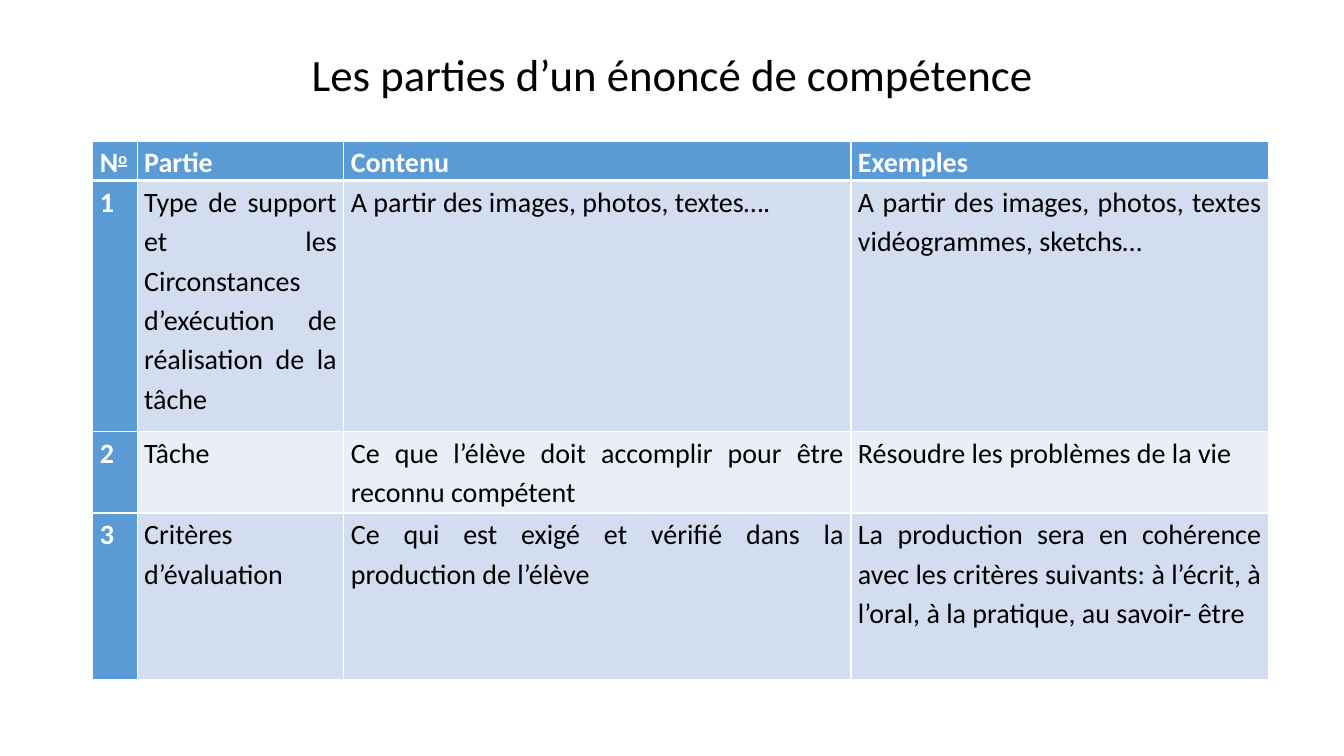
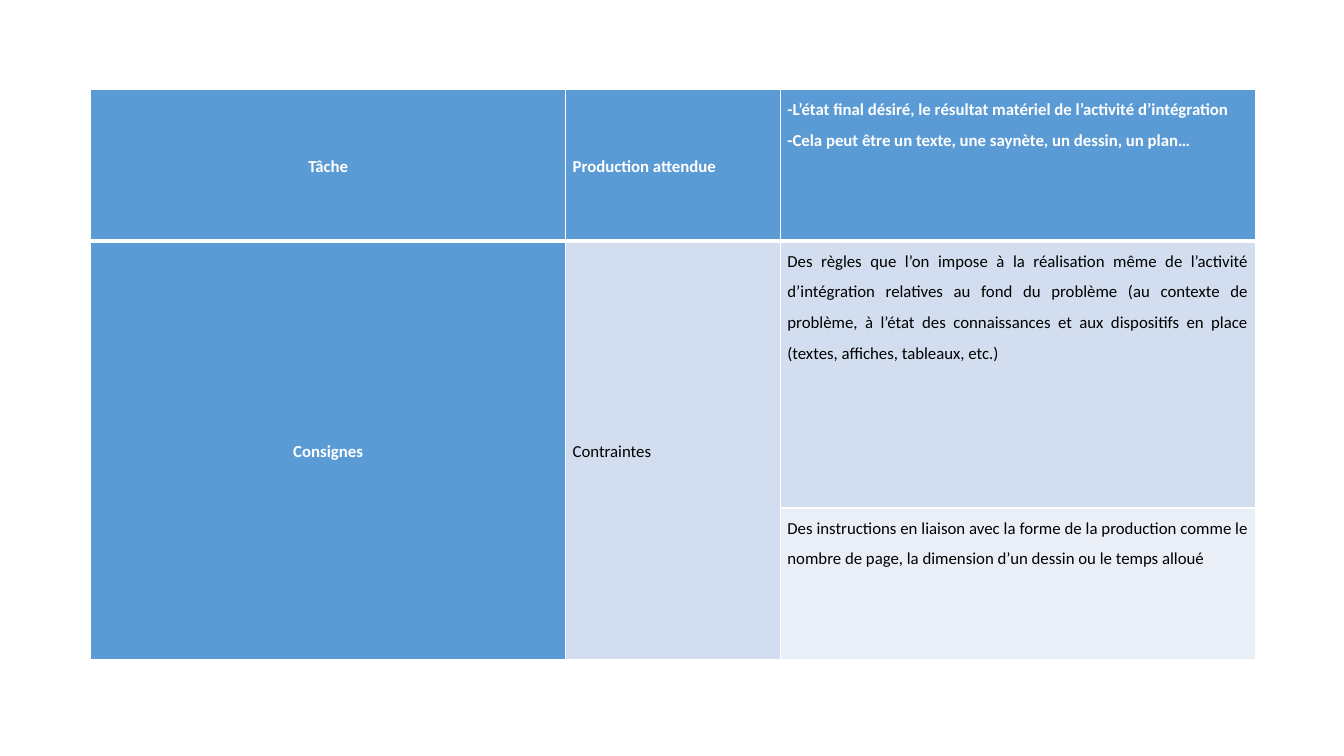
from collections import namedtuple

from lxml.etree import SubElement
from pptx import Presentation
from pptx.dml.color import RGBColor as Color
from pptx.enum.text import MSO_ANCHOR as Anchor, PP_ALIGN as Align
from pptx.oxml.ns import qn
from pptx.util import Emu, Pt

PX = 9144  # one hundred px to the inch

Theme = namedtuple(
    "Theme", "font title_size large small ink white accent band_odd band_even thin thick")
theme = Theme(
    font="Calibri", title_size=32, large=20, small=12,
    ink="000000", white="FFFFFF", accent="5B9BD5",
    band_odd="D2DEEF", band_even="EAEFF7", thin=1, thick=3)

# Each column: width, alignment, anchor, line spacing
Column = namedtuple("Column", "width align anchor spacing")


def add_span(para, text, size, color, bold=False):
    span = para.add_run()
    span.text = text
    formats = {"name": theme.font, "size": Pt(size), "bold": bold}
    for name, value in formats.items():
        setattr(span.font, name, value)
    span.font.color.rgb = Color.from_string(color)
    return span


def add_grid(page, left, top, columns, heights, rows, size, merges=()):
    width = sum(column.width for column in columns)
    frame = page.shapes.add_table(
        len(rows), len(columns),
        *(Emu(n * PX) for n in (left, top, width, sum(heights))))
    table = frame.table
    table.first_row = table.horz_banding = False
    for index, column in enumerate(columns):
        table.columns[index].width = Emu(column.width * PX)
    for index, height in enumerate(heights):
        table.rows[index].height = Emu(height * PX)

    for row, texts in enumerate(rows):
        for col, (text, column) in enumerate(zip(texts, columns)):
            cell = table.cell(row, col)
            strong = row == 0 or col == 0
            formats = {
                "margin_left": Emu(7 * PX), "margin_right": Emu(7 * PX),
                "margin_top": 0, "margin_bottom": 0,
                "vertical_anchor": column.anchor}
            for name, value in formats.items():
                setattr(cell, name, value)

            # Borders: a thick rule between the header and the body
            properties = cell._tc.get_or_add_tcPr()
            for side in "LRTB":
                thick = (row, side) in ((0, "B"), (1, "T"))
                line = SubElement(
                    properties, qn(f"a:ln{side}"),
                    w=str(Pt(theme.thick if thick else theme.thin)))
                fill = SubElement(line, qn("a:solidFill"))
                SubElement(fill, qn("a:srgbClr"), val=theme.white)

            band = theme.band_odd if row % 2 else theme.band_even
            cell.fill.solid()
            cell.fill.fore_color.rgb = Color.from_string(
                theme.accent if strong else band)

            for index, line_text in enumerate(text.split("\n") if text else ()):
                body = cell.text_frame
                para = body.add_paragraph() if index else body.paragraphs[0]
                para.alignment = column.align
                para.line_spacing = column.spacing
                add_span(para, line_text, size,
                         theme.white if strong else theme.ink, strong)

    for first, last in merges:
        table.cell(*first).merge(table.cell(*last))
    return table


deck = Presentation()
deck.slide_width, deck.slide_height = Emu(1333 * PX), Emu(750 * PX)
blank = deck.slide_layouts[6]

# Slide 1: title
page = deck.slides.add_slide(blank)
box = page.shapes.add_textbox(*(Emu(n * PX) for n in (92, 40, 1150, 72)))
box.text_frame.word_wrap = True
box.text_frame.vertical_anchor = Anchor.MIDDLE
para = box.text_frame.paragraphs[0]
para.alignment = Align.CENTER
para.line_spacing = 0.9
add_span(para, "Les parties d’un énoncé de compétence", theme.title_size, theme.ink)

# Slide 1: table of the parts
parts = add_grid(
    page, 92, 140,
    [Column(width, Align.JUSTIFY, Anchor.TOP, 1.15) for width in (44, 205, 503, 414)],
    [39, 249, 81, 165],
    [
        ["N", "Partie", "Contenu", "Exemples"],
        ["1",
         "Type de support et les Circonstances d’exécution de réalisation de la tâche",
         "A partir des images, photos, textes….",
         "A partir des images, photos, textes vidéogrammes, sketchs…"],
        ["2", "Tâche",
         "Ce que l’élève doit accomplir pour être reconnu compétent",
         "Résoudre les problèmes de la vie"],
        ["3", "Critères d’évaluation",
         "Ce qui est exigé et vérifié dans la production de l’élève",
         "La production sera en cohérence avec les critères suivants: "
         "à l’écrit, à l’oral, à la pratique, au savoir- être"],
    ],
    theme.large)

# Raised, underlined "o" of the number sign
raised = add_span(parts.cell(0, 0).text_frame.paragraphs[0], "o",
                  theme.large, theme.white, True)
raised.font.underline = True
raised._r.get_or_add_rPr().set("baseline", "30000")

# Slide 2: table of the task and its instructions
page = deck.slides.add_slide(blank)
add_grid(
    page, 90, 89,
    [Column(471, Align.CENTER, Anchor.MIDDLE, 1.15),
     Column(213, Align.JUSTIFY, Anchor.MIDDLE, 1.15),
     Column(471, Align.JUSTIFY, Anchor.TOP, 1.5)],
    [150, 265, 150],
    [
        ["Tâche", "Production attendue",
         "-L’état final désiré, le résultat matériel de l’activité d’intégration\n"
         "-Cela peut être un texte, une saynète, un dessin, un plan…"],
        ["Consignes", "Contraintes",
         "Des règles que l’on impose à la réalisation même de l’activité "
         "d’intégration relatives au fond du problème (au contexte de problème, "
         "à l’état des connaissances et aux dispositifs en place "
         "(textes, affiches, tableaux, etc.)"],
        ["", "",
         "Des instructions en liaison avec la forme de la production comme le "
         "nombre de page, la dimension d’un dessin ou le temps alloué"],
    ],
    theme.small,
    merges=[((1, col), (2, col)) for col in (0, 1)])

deck.save("out.pptx")
